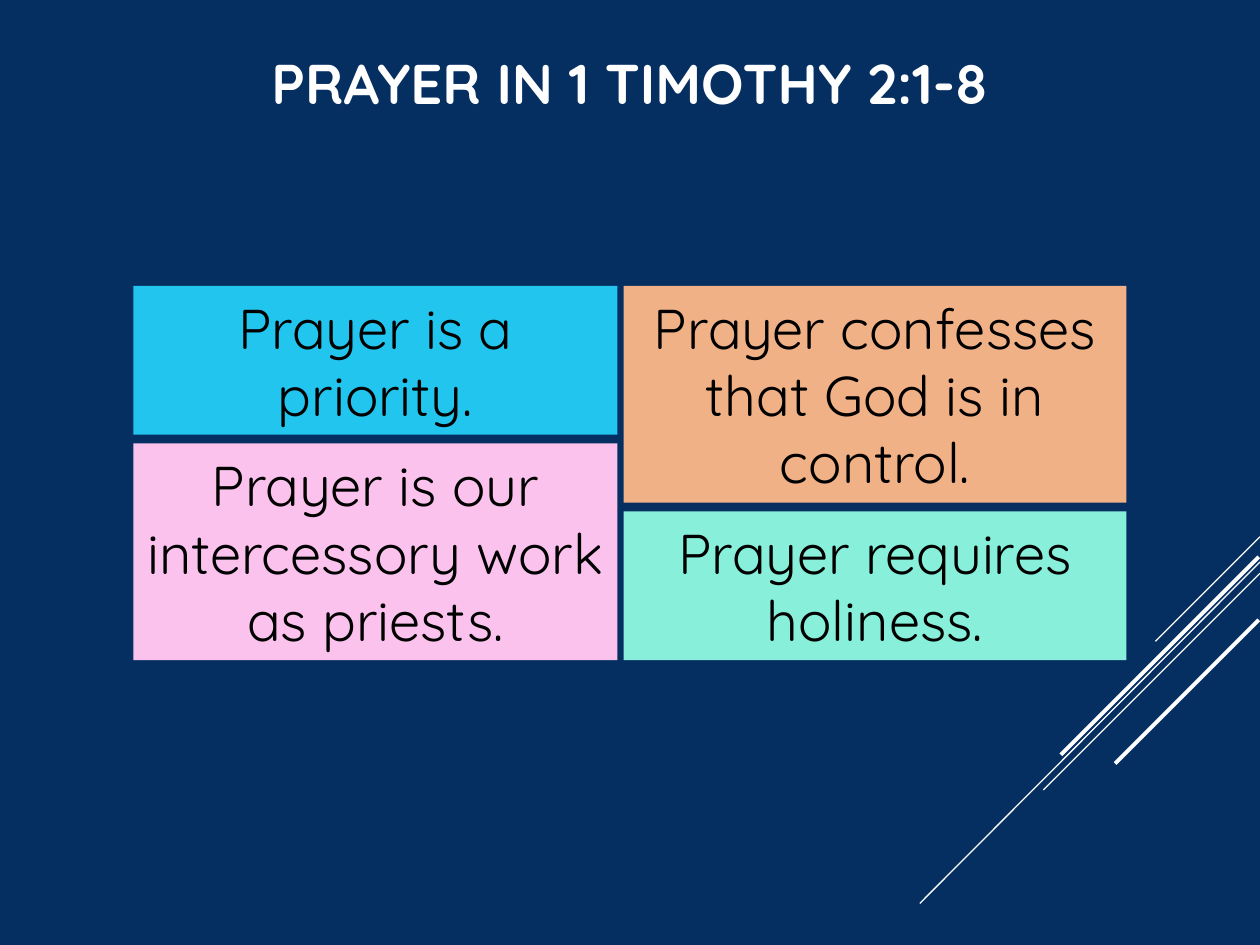
from lxml.etree import SubElement
from pptx import Presentation
from pptx.dml.color import RGBColor
from pptx.enum.shapes import MSO_CONNECTOR, MSO_SHAPE
from pptx.enum.text import MSO_ANCHOR, MSO_AUTO_SIZE, PP_ALIGN
from pptx.oxml.ns import qn
from pptx.util import Pt

COLORS = {
    "navy": "052F61", "white": "FFFFFF", "black": "000000",
    "sky": "22C5ED", "peach": "F1B187", "pink": "FAC2ED", "mint": "87EFDA",
}


def color(name):
    return RGBColor.from_string(COLORS[name])


def write(frame, wording, ink, bold):
    frame.text = wording
    frame.word_wrap = True
    frame.vertical_anchor = MSO_ANCHOR.MIDDLE
    paragraph = frame.paragraphs[0]
    paragraph.alignment = PP_ALIGN.CENTER
    font = paragraph.runs[0].font
    font.color.rgb = color(ink)
    for attribute, value in {"name": "Quicksand", "size": Pt(32), "bold": bold}.items():
        setattr(font, attribute, value)


prs = Presentation()
prs.slide_width, prs.slide_height = Pt(720), Pt(540)
slide = prs.slides.add_slide(prs.slide_layouts[5])
slide.background.fill.solid()
slide.background.fill.fore_color.rgb = color("navy")

rays = [
    (720, 306.72, 660.24, 366.48, 0.75),
    (720, 321.12, 525.6, 516.24, 0.75),
    (720, 327.6, 596.16, 451.44, 0.75),
    (719.28, 318.24, 606.24, 431.28, 2.25),
    (719.28, 354.24, 637.2, 436.32, 2.25),
]
for *ends, weight in rays:
    ray = slide.shapes.add_connector(MSO_CONNECTOR.STRAIGHT, *map(Pt, ends))
    ray.line.color.rgb = color("white")
    ray.line.width = Pt(weight)
    SubElement(ray._element.spPr, qn("a:effectLst"))

heading = slide.shapes.title
placement = {"left": 76.3, "top": 13.7, "width": 567.4, "height": 67}
for attribute, value in placement.items():
    setattr(heading, attribute, Pt(value))
write(heading.text_frame, "PRAYER IN 1 TIMOTHY 2:1-8", "white", True)

GRID_TOP, GAP = 163.4, 5
SHORT, TALL = 85, 123.8
columns = [
    (76.3, 276.5, [("Prayer is a priority.", "sky", SHORT),
                   ("Prayer is our intercessory work as priests.", "pink", TALL)]),
    (356.4, 287.3, [("Prayer confesses that God is in control.", "peach", TALL),
                    ("Prayer requires holiness.", "mint", SHORT)]),
]
for left, width, points in columns:
    top = GRID_TOP
    for wording, tint, height in points:
        card = slide.shapes.add_shape(
            MSO_SHAPE.RECTANGLE, Pt(left), Pt(top), Pt(width), Pt(height))
        card.shadow.inherit = False
        card.fill.solid()
        card.fill.fore_color.rgb = color(tint)
        card.line.fill.background()
        write(card.text_frame, wording, "black", False)
        card.text_frame.auto_size = MSO_AUTO_SIZE.SHAPE_TO_FIT_TEXT
        top += height + GAP

prs.save("out.pptx")
